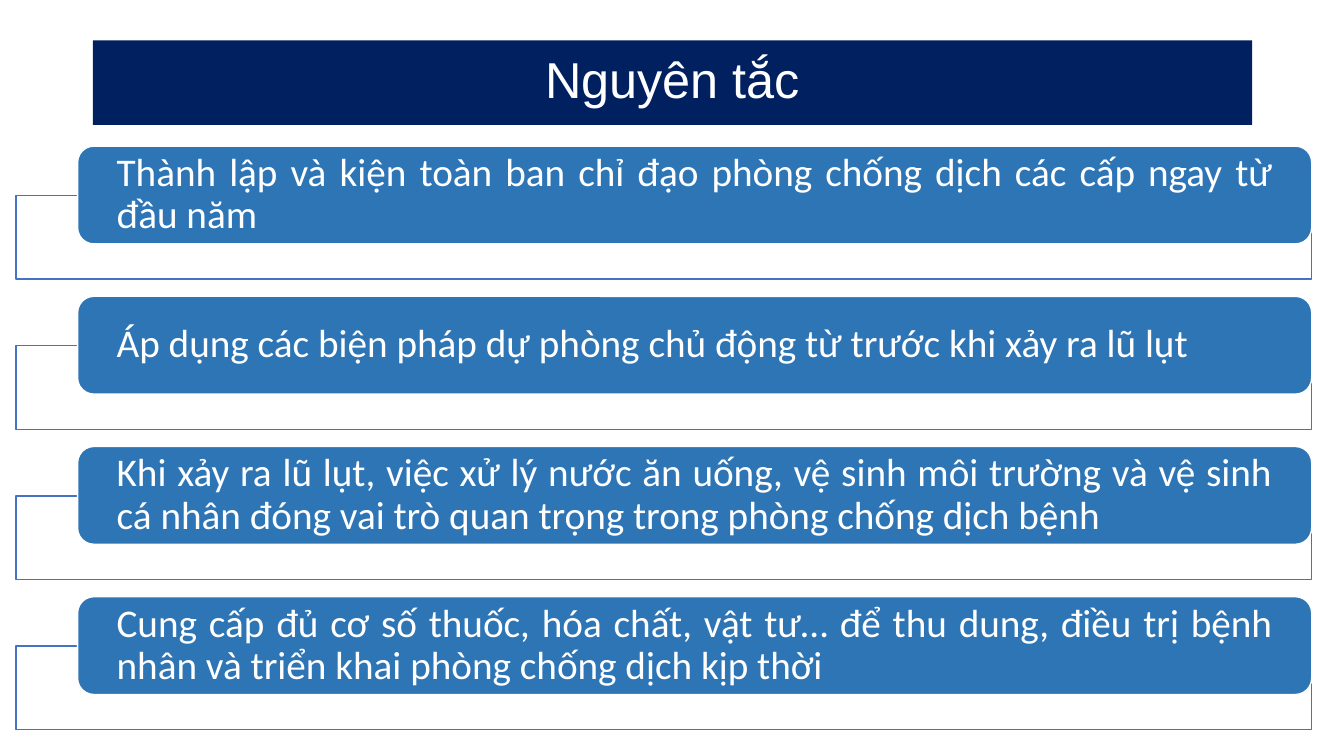
from dataclasses import dataclass

from pptx import Presentation
from pptx.dml.color import RGBColor
from pptx.enum.shapes import MSO_SHAPE as Shape
from pptx.enum.text import MSO_ANCHOR as Anchor, MSO_AUTO_SIZE as AutoSize, PP_ALIGN as Align
from pptx.util import Inches, Pt


@dataclass(frozen=True)
class Theme:
    navy: RGBColor = RGBColor(0x00, 0x20, 0x60)
    blue: RGBColor = RGBColor(0x2E, 0x75, 0xB6)
    outline: RGBColor = RGBColor(0x44, 0x72, 0xC4)
    white: RGBColor = RGBColor(0xFF, 0xFF, 0xFF)
    title_font: str = "Arial"
    body_font: str = "Calibri"
    title_size: int = 36
    body_size: int = 28


THEME = Theme()

PRINCIPLES = [
    "Thành lập và kiện toàn ban chỉ đạo phòng chống dịch các cấp ngay từ đầu năm",
    "Áp dụng các biện pháp dự phòng chủ động từ trước khi xảy ra lũ lụt",
    "Khi xảy ra lũ lụt, việc xử lý nước ăn uống, vệ sinh môi trường và vệ sinh "
    "cá nhân đóng vai trò quan trọng trong phòng chống dịch bệnh",
    "Cung cấp đủ cơ số thuốc, hóa chất, vật tư… để thu dung, điều trị bệnh nhân "
    "và triển khai phòng chống dịch kịp thời",
]

# Vertical rhythm of the list, in inches
FIRST_TOP = 1.45
ROW_STEP = 1.49
FRAME_DROP = 0.49


def set_attributes(target, values):
    for name, value in values.items():
        setattr(target, name, value)


def write_text(shape, text, alignment, side_margin, font_format):
    frame = shape.text_frame
    set_attributes(frame, {
        "text": text, "word_wrap": True, "auto_size": AutoSize.NONE,
        "vertical_anchor": Anchor.MIDDLE,
        "margin_left": side_margin, "margin_right": side_margin,
        "margin_top": 0, "margin_bottom": 0,
    })
    paragraph = frame.paragraphs[0]
    set_attributes(paragraph, {"alignment": alignment, "line_spacing": 0.9})
    font = paragraph.runs[0].font
    set_attributes(font, font_format)
    font.color.rgb = THEME.white


def add_title(slide, text):
    title = slide.shapes.title
    set_attributes(title, {
        "left": Inches(0.92), "top": Inches(0.4),
        "width": Inches(11.5), "height": Inches(0.84),
    })
    title.fill.solid()
    title.fill.fore_color.rgb = THEME.navy
    write_text(title, text, Align.CENTER, Inches(0.1),
               {"name": THEME.title_font, "size": Pt(THEME.title_size)})


def add_box(slide, kind, left, top, width, height, fill, line):
    shape = slide.shapes.add_shape(
        kind, Inches(left), Inches(top), Inches(width), Inches(height))
    shape.shadow.inherit = False
    shape.fill.solid()
    shape.fill.fore_color.rgb = fill
    shape.line.color.rgb = line
    shape.line.width = Pt(1)
    return shape


def add_principle(slide, text, top):
    # Open frame behind, rounded label in front
    add_box(slide, Shape.RECTANGLE, 0.16, top + FRAME_DROP, 12.85, 0.83,
            THEME.white, THEME.outline)
    label = add_box(slide, Shape.ROUNDED_RECTANGLE, 0.77, top, 12.24, 0.97,
                    THEME.blue, THEME.white)
    write_text(label, text, Align.JUSTIFY, Inches(0.34),
               {"name": THEME.body_font, "size": Pt(THEME.body_size)})


def main():
    presentation = Presentation()
    presentation.slide_width = Inches(13.33)
    presentation.slide_height = Inches(7.5)
    title_only = presentation.slide_layouts[5]
    slide = presentation.slides.add_slide(title_only)

    add_title(slide, "Nguyên tắc")
    for row, text in enumerate(PRINCIPLES):
        add_principle(slide, text, FIRST_TOP + row * ROW_STEP)

    presentation.save("out.pptx")


if __name__ == "__main__":
    main()
